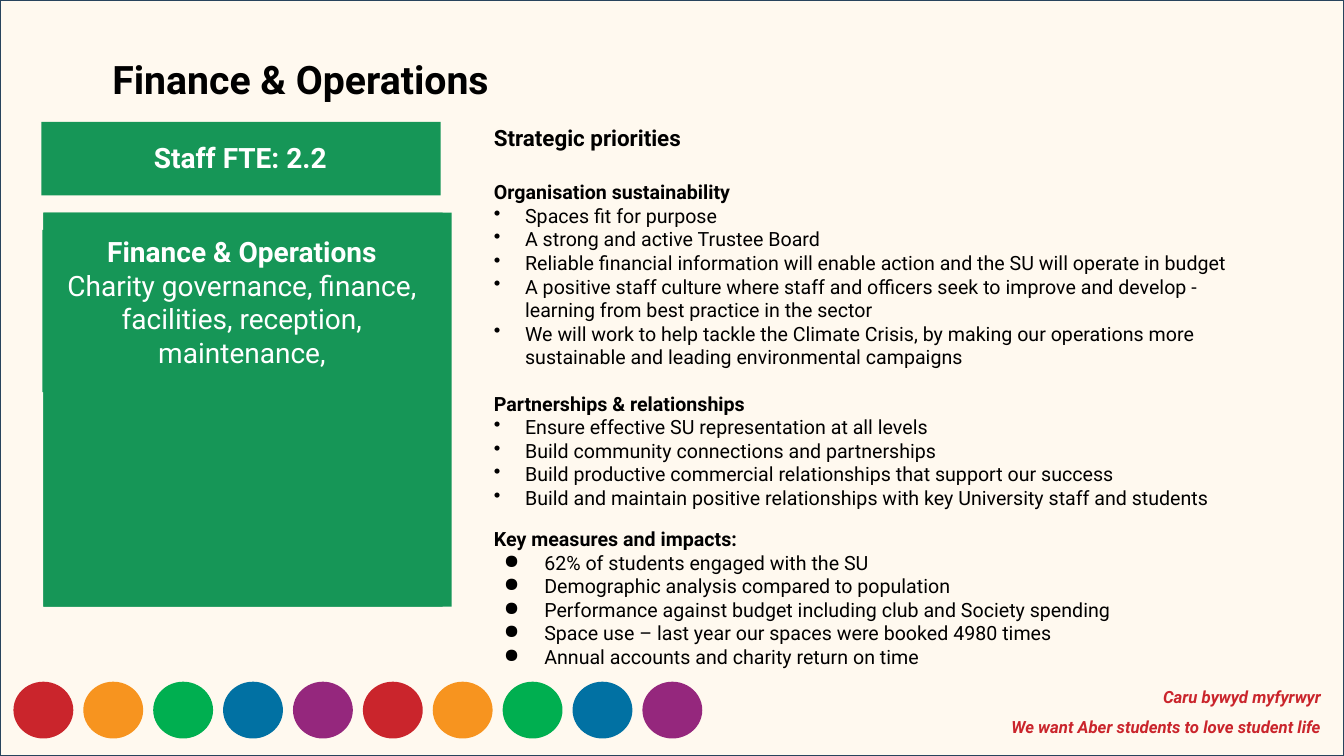
from lxml.etree import SubElement
from pptx import Presentation
from pptx.dml.color import RGBColor
from pptx.enum.shapes import MSO_SHAPE
from pptx.enum.text import MSO_ANCHOR, PP_ALIGN
from pptx.oxml.ns import qn
from pptx.util import Inches, Pt

WIDTH, HEIGHT = 13.33, 7.5
FONT = "Roboto"
GREEN, RED, BLACK, WHITE = "169657", "CA252C", "000000", "FFFFFF"
DOT_COLORS = [RED, "F7941F", "00AF50", "0171A3", "95277D"] * 2

SUSTAINABILITY = [
    "Spaces fit for purpose",
    "A strong and active Trustee Board",
    "Reliable financial information will enable action and the SU will operate in budget",
    "A positive staff culture where staff and officers seek to improve and develop - learning from best practice in the sector",
    "We will work to help tackle the Climate Crisis, by making our operations more sustainable and leading environmental campaigns",
]
PARTNERSHIPS = [
    "Ensure effective SU representation at all levels",
    "Build community connections and partnerships",
    "Build productive commercial relationships that support our success",
    "Build and maintain positive relationships with key University staff and students",
]
MEASURES = [
    "62% of students engaged with the SU",
    "Demographic analysis compared to population",
    "Performance against budget including club and Society spending",
    "Space use – last year our spaces were booked 4980 times",
    "Annual accounts and charity return on time",
]


def rgb(value):
    return RGBColor.from_string(value)


def place(left, top, width, height):
    """Turn percentages of the slide into lengths."""
    return (Inches(left * WIDTH / 100), Inches(top * HEIGHT / 100),
            Inches(width * WIDTH / 100), Inches(height * HEIGHT / 100))


def add_block(slide, area, fill, line=None, weight=1, kind=MSO_SHAPE.RECTANGLE):
    block = slide.shapes.add_shape(kind, *place(*area))
    block.shadow.inherit = False
    block.fill.solid()
    block.fill.fore_color.rgb = rgb(fill)
    if line:
        block.line.color.rgb = rgb(line)
        block.line.width = Pt(weight)
    else:
        block.line.fill.background()
    return block


def add_label(slide, area, inset=0.05):
    frame = slide.shapes.add_textbox(*place(*area)).text_frame
    frame.word_wrap = True
    frame.margin_top = frame.margin_bottom = Inches(inset)
    return frame


def write(frame, text, size, color=BLACK, bold=True, italic=False,
          align=PP_ALIGN.LEFT, spacing=None, gap=0):
    paragraph = frame.paragraphs[0] if not frame.text else frame.add_paragraph()
    paragraph.text = text
    paragraph.alignment = align
    if spacing:
        paragraph.line_spacing = spacing
    if gap:
        paragraph.space_before = Pt(gap)
    for run in paragraph.runs:
        run.font.name = FONT
        run.font.size = Pt(size)
        run.font.bold = bold
        run.font.italic = italic
        run.font.color.rgb = rgb(color)
    return paragraph


def write_section(frame, heading, items, bullet="•", indent=0.31, hanging=0.31, gap=0):
    write(frame, heading, 14, gap=gap)
    for item in items:
        properties = write(frame, item, 14, bold=False)._p.get_or_add_pPr()
        properties.set("marL", str(Inches(indent)))
        properties.set("indent", str(-Inches(hanging)))
        bullet_color = SubElement(properties, qn("a:buClr"))
        SubElement(bullet_color, qn("a:srgbClr"), val=BLACK)
        SubElement(properties, qn("a:buChar"), char=bullet)


def add_footer(slide):
    motto = add_label(slide, (50.04, 88.8, 48.99, 8.93))
    for line in ("Caru bywyd myfyrwyr", "We want Aber students to love student life"):
        write(motto, line, 12, RED, italic=True, align=PP_ALIGN.RIGHT, spacing=1.5)
    for column, color in enumerate(DOT_COLORS):
        add_block(slide, (1.05 + 5.2 * column, 90.27, 4.35, 7.33), color, color,
                  kind=MSO_SHAPE.OVAL)


def add_team(slide):
    for width in (30.38, 29.71):
        add_block(slide, (3.23, 28.13, width, 52.13), GREEN)
    remit = add_block(slide, (3.15, 30.4, 29.71, 21.47), GREEN).text_frame
    remit.word_wrap = True
    remit.vertical_anchor = MSO_ANCHOR.TOP
    write(remit, "Finance & Operations", 20, WHITE, align=PP_ALIGN.CENTER)
    write(remit, "Charity governance, finance, facilities, reception, maintenance,",
          20, WHITE, bold=False, align=PP_ALIGN.CENTER)
    add_block(slide, (3.08, 16.13, 29.71, 9.73), GREEN)
    staff = add_label(slide, (3, 18.4, 29.78, 5.33))
    write(staff, "Staff FTE: 2.2", 20, WHITE, align=PP_ALIGN.CENTER, spacing=0.9)


def add_priorities(slide):
    measures = add_label(slide, (36.01, 68.4, 57.31, 20.27), 0.1)
    write_section(measures, "Key measures and impacts:", MEASURES, "●", 0.5, 0.4)
    priorities = add_label(slide, (36.01, 15.07, 57.31, 36.13), 0.1)
    write(priorities, "Strategic priorities", 16)
    write_section(priorities, "Organisation sustainability", SUSTAINABILITY, gap=21)
    write_section(priorities, "Partnerships & relationships", PARTNERSHIPS, gap=16.5)


def main():
    deck = Presentation()
    deck.slide_width, deck.slide_height = Inches(WIDTH), Inches(HEIGHT)
    slide = deck.slides.add_slide(deck.slide_layouts[6])
    add_block(slide, (0, 0, 100, 100), "FFF9EF", "28445D", 2)
    add_footer(slide)
    title = add_label(slide, (4.13, 6.67, 36.46, 13.87))
    write(title, "Finance & Operations", 28, align=PP_ALIGN.CENTER)
    add_team(slide)
    add_priorities(slide)
    deck.save("out.pptx")


if __name__ == "__main__":
    main()
